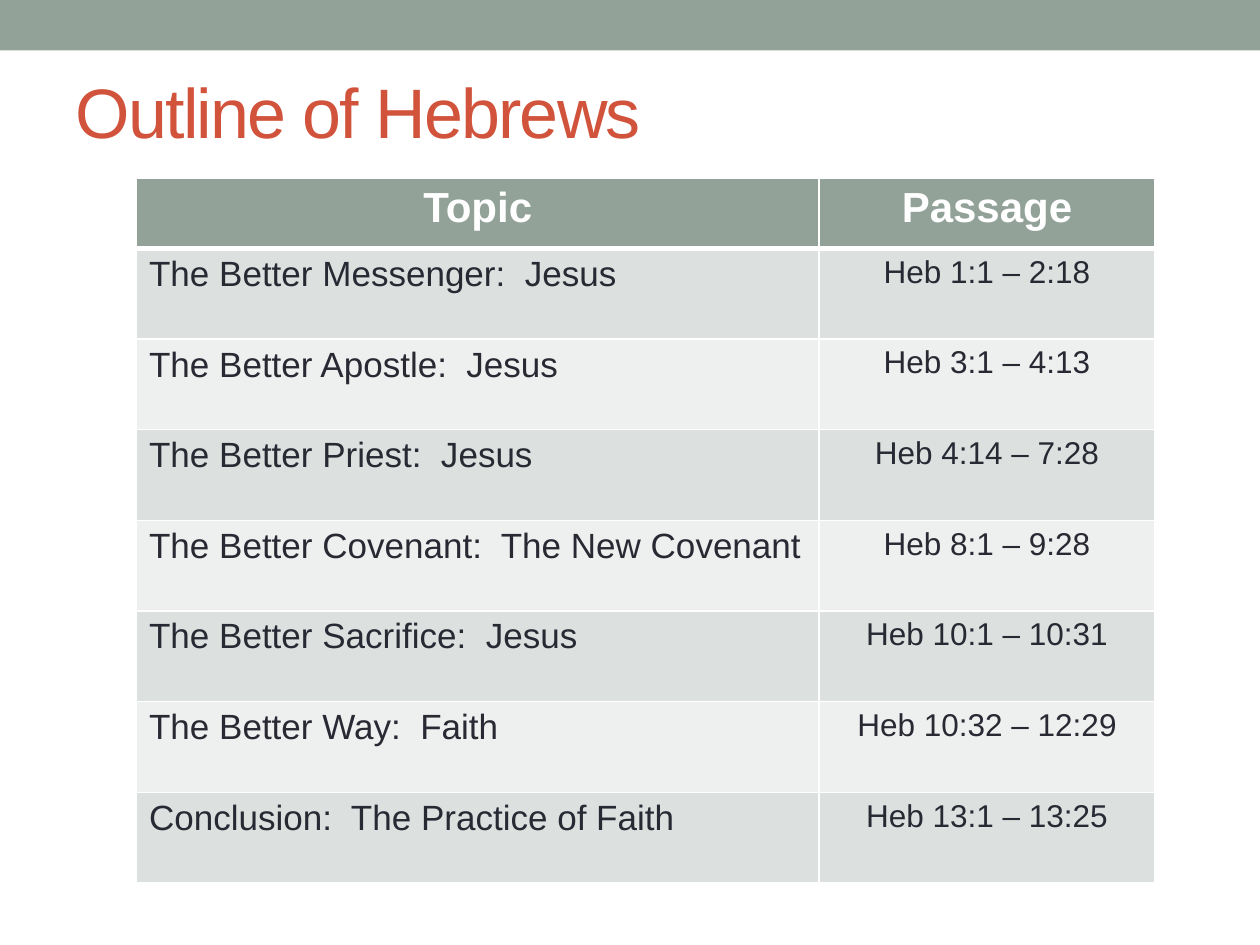
from lxml.etree import SubElement
from pptx import Presentation
from pptx.dml.color import RGBColor
from pptx.enum.shapes import MSO_SHAPE
from pptx.enum.text import MSO_ANCHOR, MSO_AUTO_SIZE, PP_ALIGN
from pptx.oxml.ns import qn
from pptx.util import Pt

INK = {"sage": "93A299", "rust": "D2533C", "dark": "292934",
       "white": "FFFFFF", "odd": "DCE0DE", "even": "EEF0EF"}
HEAD = ("Topic", "Passage")
ROWS = [
    ("The Better Messenger:  Jesus", "Heb 1:1 – 2:18"),
    ("The Better Apostle:  Jesus", "Heb 3:1 – 4:13"),
    ("The Better Priest:  Jesus", "Heb 4:14 – 7:28"),
    ("The Better Covenant:  The New Covenant", "Heb 8:1 – 9:28"),
    ("The Better Sacrifice:  Jesus", "Heb 10:1 – 10:31"),
    ("The Better Way:  Faith", "Heb 10:32 – 12:29"),
    ("Conclusion:  The Practice of Faith", "Heb 13:1 – 13:25"),
]


def tint(fill, ink):
    fill.solid()
    fill.fore_color.rgb = RGBColor.from_string(INK[ink])


def write(frame, text, size=20, ink="dark", bold=False, align=PP_ALIGN.LEFT, gap=0):
    para = frame.paragraphs[0]
    para.alignment = align
    run = para.add_run()
    run.text = text
    run.font.name = "Arial"
    run.font.size = Pt(size)
    run.font.bold = bold
    run.font.color.rgb = RGBColor.from_string(INK[ink])
    if gap:
        run._r.get_or_add_rPr().set("spc", str(gap * 100))


def edge(cell, **widths):
    props = cell._tc.get_or_add_tcPr()
    for side in "LRTB":
        line = SubElement(props, qn("a:ln" + side), w=str(Pt(widths.get(side, 1))))
        fill = SubElement(line, qn("a:solidFill"))
        SubElement(fill, qn("a:srgbClr"), val=INK["white"])


def band(slide, left, top, width, height):
    bar = slide.shapes.add_shape(MSO_SHAPE.RECTANGLE, Pt(left), Pt(top), Pt(width), Pt(height))
    bar.shadow.inherit = False
    tint(bar.fill, "sage")
    bar.line.fill.background()


def title(slide, left, top, width, height):
    box = slide.shapes.title
    box.left, box.top, box.width, box.height = Pt(left), Pt(top), Pt(width), Pt(height)
    frame = box.text_frame
    frame.auto_size = MSO_AUTO_SIZE.NONE
    frame.vertical_anchor = MSO_ANCHOR.MIDDLE
    write(frame, "Outline of Hebrews", size=40, ink="rust", gap=-1)


def outline(slide, left, top, width, height):
    first, topic = 40, 390
    grid = slide.shapes.add_table(len(ROWS) + 1, 2, Pt(left), Pt(top), Pt(width), Pt(height)).table
    grid.columns[0].width, grid.columns[1].width = Pt(topic), Pt(width - topic)
    for r, row in enumerate([HEAD] + ROWS):
        grid.rows[r].height = Pt((height - first) / len(ROWS) if r else first)
        for c, text in enumerate(row):
            cell = grid.cell(r, c)
            edge(cell, T=3 if r == 1 else 1, B=1 if r else 3)
            if r:
                tint(cell.fill, "odd" if r % 2 else "even")
                write(cell.text_frame, text, size=18 if c else 20,
                      align=PP_ALIGN.CENTER if c else PP_ALIGN.LEFT)
            else:
                tint(cell.fill, "sage")
                write(cell.text_frame, text, size=24, ink="white", bold=True,
                      align=PP_ALIGN.CENTER)


def main():
    deck = Presentation()
    deck.slide_width, deck.slide_height = Pt(720), Pt(540)
    slide = deck.slides.add_slide(deck.slide_layouts[5])
    band(slide, 0, 0, 720, 28.8)
    title(slide, 36, 24, 648, 78)
    outline(slide, 78, 102, 582, 402.6)
    deck.save("out.pptx")


if __name__ == "__main__":
    main()
